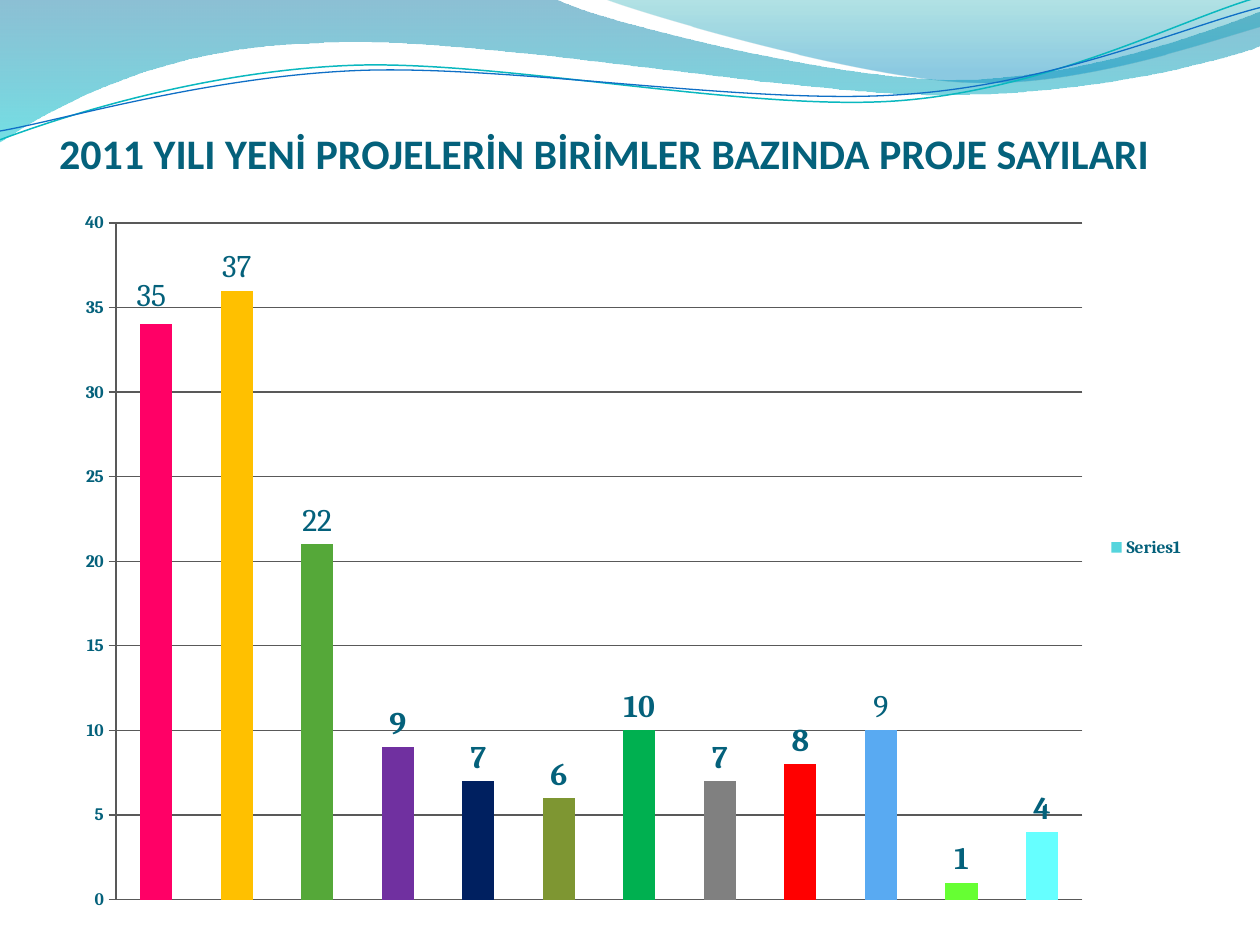
"""Build a slide with wave bands and a column chart of new projects per unit."""
from math import cos, radians, sin
from lxml.etree import SubElement
from pptx import Presentation
from pptx.chart.data import CategoryChartData
from pptx.dml.color import RGBColor
from pptx.enum.chart import (XL_CHART_TYPE, XL_LABEL_POSITION,
                             XL_LEGEND_POSITION, XL_TICK_MARK)
from pptx.enum.text import MSO_ANCHOR
from pptx.oxml import parse_xml
from pptx.oxml.ns import nsdecls, qn
from pptx.util import Inches, Pt

TITLE = "2011 YILI YENİ PROJELERİN BİRİMLER BAZINDA PROJE SAYILARI"
INK = RGBColor(0x04, 0x61, 0x7B)
GRID = RGBColor(0x59, 0x59, 0x59)
AQUA = RGBColor(0x55, 0xD5, 0xDD)
TEAL = RGBColor(0x0A, 0xB8, 0xBF)
BLUE = RGBColor(0x0F, 0x6F, 0xC6)

BARS = [
    (34, RGBColor(0xFF, 0x00, 0x66), "35"),
    (36, RGBColor(0xFF, 0xC0, 0x00), "37"),
    (21, RGBColor(0x55, 0xA8, 0x39), "22"),
    (9, RGBColor(0x70, 0x30, 0xA0), None),
    (7, RGBColor(0x00, 0x20, 0x60), None),
    (6, RGBColor(0x7E, 0x96, 0x32), None),
    (10, RGBColor(0x00, 0xB0, 0x50), None),
    (7, RGBColor(0x80, 0x80, 0x80), None),
    (8, RGBColor(0xFF, 0x00, 0x00), None),
    (10, RGBColor(0x59, 0xAA, 0xF2), "9"),
    (1, RGBColor(0x66, 0xFF, 0x33), None),
    (4, RGBColor(0x66, 0xFF, 0xFF), None),
]
CHART = (0.5, 1.47, 9, 5.75)
PLOT = {"x": 0.42, "y": 0.3, "w": 7.67, "h": 5.37}
NUDGE = {"x": -0.04, "y": -0.04}

BANDS = [
    ((-0.01, -0.01, 10.02, 1.14),
     [(0, 0), (4.4, -0.01), (4.76, 0.17, 6.64, 0.63, 7.58, 0.63),
      (8.53, 0.63, 9.58, 0.26, 10, 0.09), (10.01, 0.36),
      (9.83, 0.44, 8.7, 0.76, 7.46, 0.75), (6.22, 0.75, 3.82, 0.28, 2.57, 0.34),
      (1.29, 0.36, 0.46, 0.83, -0.01, 1.13)],
     [(0, RGBColor(0x00, 0x74, 0xA1), 45), (1, RGBColor(0x00, 0xC6, 0xCF), 55)]),
    ((4.79, -0.01, 5.21, 0.7),
     [(4.79, -0.01), (5.09, 0.11, 6.82, 0.62, 7.69, 0.65),
      (8.56, 0.69, 9.61, 0.32, 10, 0.21), (10, 0)],
     [(0, RGBColor(0x00, 0xA1, 0xA9), 30), (0.8, RGBColor(0x00, 0x8B, 0xBF), 45)]),
]
TURN = -2.7
WAVES = [
    ((-0.02, 0.22, 10.02, 0.71),
     [(0, 1.11), (0.48, 0.93, 1.58, 0.57, 2.77, 0.52),
      (3.95, 0.47, 5.93, 0.89, 7.13, 0.8), (8.33, 0.71, 9.38, 0.15, 9.98, -0.02)],
     TEAL, 0.85),
    ((-0.02, 0.3, 10.03, 0.58),
     [(0, 1.04), (0.47, 0.96, 1.64, 0.61, 2.83, 0.56),
      (4.03, 0.51, 5.97, 0.84, 7.17, 0.75), (8.36, 0.67, 9.41, 0.21, 10, 0.06)],
     BLUE, 0.75),
]


def draw(slide, box, steps, close, turn=0):
    """Draw an outline of lines and cubic curves inside a turned box."""
    left, top, wide, high = box
    c, s = cos(radians(turn)), sin(radians(turn))

    def place(x, y):
        dx, dy = x - left - wide / 2, y - top - high / 2
        return (Inches(c * dx + s * dy + wide / 2),
                Inches(c * dy - s * dx + high / 2))

    rows = [[place(*step[i:i + 2]) for i in range(0, len(step), 2)] for step in steps]
    pen = slide.shapes.build_freeform(*rows[0][-1])
    pen.add_line_segments([row[-1] for row in rows[1:]], close=close)
    shape = pen.convert_to_shape()
    shape.left, shape.top, shape.width, shape.height = map(Inches, box)
    shape.rotation = turn
    shape.shadow.inherit = False
    route = next(shape._element.iter(qn("a:path")))
    route.set("w", str(Inches(wide)))
    route.set("h", str(Inches(high)))
    for node, row in zip(list(route), rows):
        new = SubElement(route, qn("a:cubicBezTo")) if len(row) == 3 else node
        if new is not node:
            route.replace(node, new)
        for old in list(new):
            new.remove(old)
        for x, y in row:
            dot = SubElement(new, qn("a:pt"))
            dot.set("x", str(x))
            dot.set("y", str(y))
    return shape


def add_band(slide, box, steps, stops):
    """Add a closed band with a see-through gradient."""
    band = draw(slide, box, steps, True)
    band.line.fill.background()
    band.fill.gradient()
    band.fill.gradient_angle = 270
    for stop, (place, tone, _) in zip(band.fill.gradient_stops, stops):
        stop.position = place
        stop.color.rgb = tone
    for node, (_, _, alpha) in zip(band._element.spPr.iter(qn("a:srgbClr")), stops):
        SubElement(node, qn("a:alpha")).set("val", str(alpha * 1000))


def add_wave(slide, box, steps, tone, width):
    """Add an open curved line."""
    wave = draw(slide, box, steps, False, TURN)
    wave.fill.background()
    wave.line.color.rgb = tone
    wave.line.width = Pt(width)


def style(font, size, bold, name="Cambria"):
    """Set one font in the ink colour."""
    font.name, font.size, font.bold = name, Pt(size), bold
    font.color.rgb = INK


def add_title(slide):
    """Add the heading."""
    box = slide.shapes.add_textbox(Inches(0.47), Inches(0.78), Inches(9), Inches(0.63))
    frame = box.text_frame
    frame.word_wrap = True
    frame.vertical_anchor = MSO_ANCHOR.BOTTOM
    frame.margin_left = frame.margin_right = frame.margin_bottom = 0
    run = frame.paragraphs[0].add_run()
    run.text = TITLE
    style(run.font, 24, True, "Calibri")


def set_place(node, index, sides, modes=""):
    """Give a chart part a manual layout from lengths in inches."""
    for old in node.findall(qn("c:layout")):
        node.remove(old)
    full = {"x": CHART[2], "w": CHART[2], "y": CHART[3], "h": CHART[3]}
    parts = "".join(f'<c:{k} val="{v / full[k]:.4f}"/>' for k, v in sides.items())
    node.insert(index, parse_xml(
        f'<c:layout {nsdecls("c")}><c:manualLayout>{modes}{parts}'
        '</c:manualLayout></c:layout>'))


def add_bars(slide):
    """Add the column chart."""
    data = CategoryChartData(number_format="0")
    data.categories = [str(i) for i in range(1, len(BARS) + 1)]
    data.add_series("Series1", [bar[0] for bar in BARS])
    chart = slide.shapes.add_chart(
        XL_CHART_TYPE.COLUMN_CLUSTERED, *map(Inches, CHART), data).chart
    style(chart.font, 10, True)
    chart.has_title = False
    chart.has_legend = True
    chart.legend.position = XL_LEGEND_POSITION.RIGHT
    chart.legend.include_in_layout = False
    style(chart.legend.font, 10, True)

    chart.category_axis.visible = False
    axis = chart.value_axis
    axis.minimum_scale, axis.maximum_scale, axis.major_unit = 0, 40, 5
    axis.major_tick_mark = XL_TICK_MARK.OUTSIDE
    axis.has_major_gridlines = True
    for line in (axis.format.line, axis.major_gridlines.format.line):
        line.color.rgb = GRID
        line.width = Pt(0.75)
    style(axis.tick_labels.font, 10, True)

    plot = chart.plots[0]
    plot.gap_width = 150
    plot.vary_by_categories = False
    row = plot.series[0]
    row.format.fill.solid()
    row.format.fill.fore_color.rgb = AQUA
    labels = row.data_labels
    labels.show_value = True
    labels.number_format, labels.number_format_is_linked = "0", False
    labels.position = XL_LABEL_POSITION.OUTSIDE_END
    style(labels.font, 18, True)
    for i, (_, tone, text) in enumerate(BARS):
        point = row.points[i]
        point.format.fill.solid()
        point.format.fill.fore_color.rgb = tone
        if text:
            run = point.data_label.text_frame.paragraphs[0].add_run()
            run.text = text
            style(run.font, 18, False)
            point.data_label.position = XL_LABEL_POSITION.OUTSIDE_END
    set_place(next(labels._element.iter(qn("c:dLbl"))), 1, NUDGE)
    set_place(chart._chartSpace.chart.plotArea, 0, PLOT,
              '<c:layoutTarget val="inner"/><c:xMode val="edge"/><c:yMode val="edge"/>')


deck = Presentation()
deck.slide_width, deck.slide_height = Inches(10), Inches(7.5)
page = deck.slides.add_slide(deck.slide_layouts[6])
for band in BANDS:
    add_band(page, *band)
for wave in WAVES:
    add_wave(page, *wave)
add_title(page)
add_bars(page)
deck.save("out.pptx")
